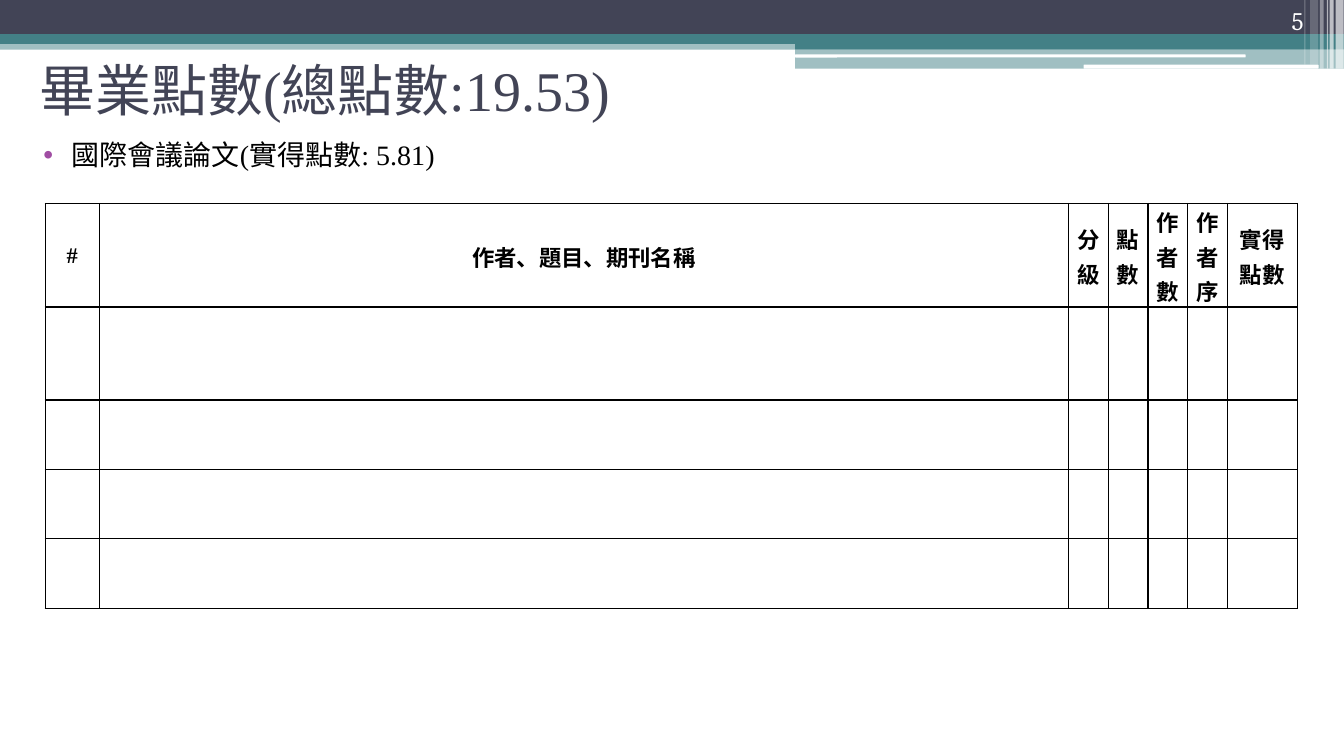
import pptx
import pptx.util
import pptx.dml.color
import pptx.enum.shapes
import pptx.enum.text
import pptx.oxml
import pptx.oxml.ns
from lxml import etree

Cm, Pt = pptx.util.Cm, pptx.util.Pt
MSO_SHAPE = pptx.enum.shapes.MSO_SHAPE
PP_ALIGN = pptx.enum.text.PP_ALIGN
ANCHOR = pptx.enum.text.MSO_ANCHOR
qn = pptx.oxml.ns.qn

COLORS = {
    "navy": "424456",
    "teal": "438086",
    "purple": "A04DA3",
    "white": "FFFFFF",
    "black": "000000",
}
SERIF = "Times New Roman"
W, H = 33.87, 19.05
HEADERS = ["#", "作者、題目、期刊名稱", "分級", "點數", "作者數", "作者序", "實得點數"]
COL_WIDTHS = [1.36, 24.43, 1, 1, 1, 1, 1.76]
ROW_HEIGHTS = [0.97, 2.34, 1.75, 1.75, 1.75]


def rgb(name):
    return pptx.dml.color.RGBColor.from_string(COLORS[name])


def write(tf, text, size=16, color="black", font=SERIF, bold=False,
          align=PP_ALIGN.LEFT, spacing=None, before=0):
    p = tf.paragraphs[0]
    p.alignment = align
    p.space_before = Pt(before)
    if spacing:
        p.line_spacing = spacing
    r = p.add_run()
    r.text = text
    r.font.size = Pt(size)
    r.font.name = font
    r.font.bold = bold
    r.font.color.rgb = rgb(color)
    return p


def place(sp, x, y, w, h, anchor=ANCHOR.TOP):
    sp.left, sp.top, sp.width, sp.height = Cm(x), Cm(y), Cm(w), Cm(h)
    tf = sp.text_frame
    tf.word_wrap = True
    tf.auto_size = pptx.enum.text.MSO_AUTO_SIZE.NONE
    tf.vertical_anchor = anchor
    sp.element.getparent().append(sp.element)
    return tf


def add_bar(s, x, y, w, h, color, opacity=100, kind=MSO_SHAPE.RECTANGLE):
    sp = s.shapes.add_shape(kind, Cm(x), Cm(y), Cm(w), Cm(h))
    sp.shadow.inherit = False
    sp.fill.solid()
    sp.fill.fore_color.rgb = rgb(color)
    sp.line.fill.background()
    if opacity < 100:
        clr = sp.element.spPr.find(qn("a:solidFill"))[0]
        etree.SubElement(clr, qn("a:alpha"), val=str(opacity * 1000))


def add_banner(s, x, y, w):
    half = 13.83
    mid = x + w - half
    add_bar(s, x, y + 1.02, w, 0.23, "teal", 50)
    add_bar(s, x, y, w, 0.86, "navy")
    add_bar(s, x, y + 0.86, w, 0.25, "teal")
    add_bar(s, mid, y + 0.99, half, 0.25, "teal")
    add_bar(s, mid, y + 1.22, half, 0.51, "teal", 50)
    for dx, dy, bw, bh in [(0, 1.37, 11.35, 0.08), (7.27, 1.63, 5.92, 0.1)]:
        add_bar(s, mid + dx, y + dy, bw, bh, "white",
                kind=MSO_SHAPE.ROUNDED_RECTANGLE)
    stripes = [(0.21, 0.2, 1.73, 65), (0.36, 0.1, 1.73, 65),
               (0.43, 0.03, 1.73, 60), (0.61, 0.1, 1.73, 40),
               (0.85, 0.2, 1.63, 20), (1, 0.03, 1.63, 30)]
    for from_right, bw, bh, opacity in stripes:
        add_bar(s, x + w - from_right, y, bw, bh, "white", opacity)


def add_title(s, x, y, w, h):
    tf = place(s.shapes.title, x, y, w, h, ANCHOR.MIDDLE)
    write(tf, "畢業點數(總點數:19.53)", size=40, color="navy", spacing=1.5)


def add_body(s, x, y, w, h):
    tf = place(s.placeholders[1], x, y, w, h)
    p = write(tf, "國際會議論文(實得點數: 5.81)", size=20, spacing=1.5, before=3)
    pPr = p._p.get_or_add_pPr()
    pPr.set("marL", str(Cm(1.02)))
    pPr.set("indent", str(-Cm(0.71)))
    clr = etree.SubElement(pPr, qn("a:buClr"))
    etree.SubElement(clr, qn("a:srgbClr"), val=COLORS["purple"])
    etree.SubElement(pPr, qn("a:buFont"), typeface="Arial")
    etree.SubElement(pPr, qn("a:buChar"), char="•")


def add_page_number(s, x, y, w, h):
    tb = s.shapes.add_textbox(Cm(x), Cm(y), Cm(w), Cm(h))
    tf = place(tb, x, y, w, h, ANCHOR.BOTTOM)
    write(tf, "5", size=18, color="white", font="Cambria", align=PP_ALIGN.RIGHT)


def format_cell(cell):
    tcPr = cell._tc.get_or_add_tcPr()
    for side in ("lnL", "lnR", "lnT", "lnB"):
        ln = etree.SubElement(tcPr, qn("a:" + side), w=str(Pt(1)))
        fill = etree.SubElement(ln, qn("a:solidFill"))
        etree.SubElement(fill, qn("a:srgbClr"), val=COLORS["black"])
    cell.fill.background()
    cell.vertical_anchor = ANCHOR.MIDDLE
    cell.margin_left = cell.margin_right = Cm(0.18)
    cell.margin_top = cell.margin_bottom = 0


def add_points_table(s, x, y, w, h):
    gf = s.shapes.add_table(len(ROW_HEIGHTS), len(COL_WIDTHS),
                            Cm(x), Cm(y), Cm(w), Cm(h))
    table = gf.table
    table.first_row = table.horz_banding = False
    for col, width in zip(table.columns, COL_WIDTHS):
        col.width = Cm(width)
    for row, height in zip(table.rows, ROW_HEIGHTS):
        row.height = Cm(height)
    for cell in table.iter_cells():
        format_cell(cell)
    for cell, text in zip(table.rows[0].cells, HEADERS):
        write(cell.text_frame, text, bold=True, align=PP_ALIGN.CENTER, spacing=1.07)


def main():
    prs = pptx.Presentation()
    prs.slide_width, prs.slide_height = Cm(W), Cm(H)
    s = prs.slides.add_slide(prs.slide_layouts[1])
    add_banner(s, 0, 0, W)
    add_title(s, 0.74, 0.33, 30.48, 2.97)
    add_body(s, 0.53, 2.92, 30.48, 13.56)
    add_page_number(s, 30.28, 0, 2.82, 1.02)
    add_points_table(s, 1.14, 5.13, sum(COL_WIDTHS), sum(ROW_HEIGHTS))
    prs.save("out.pptx")


if __name__ == "__main__":
    main()
